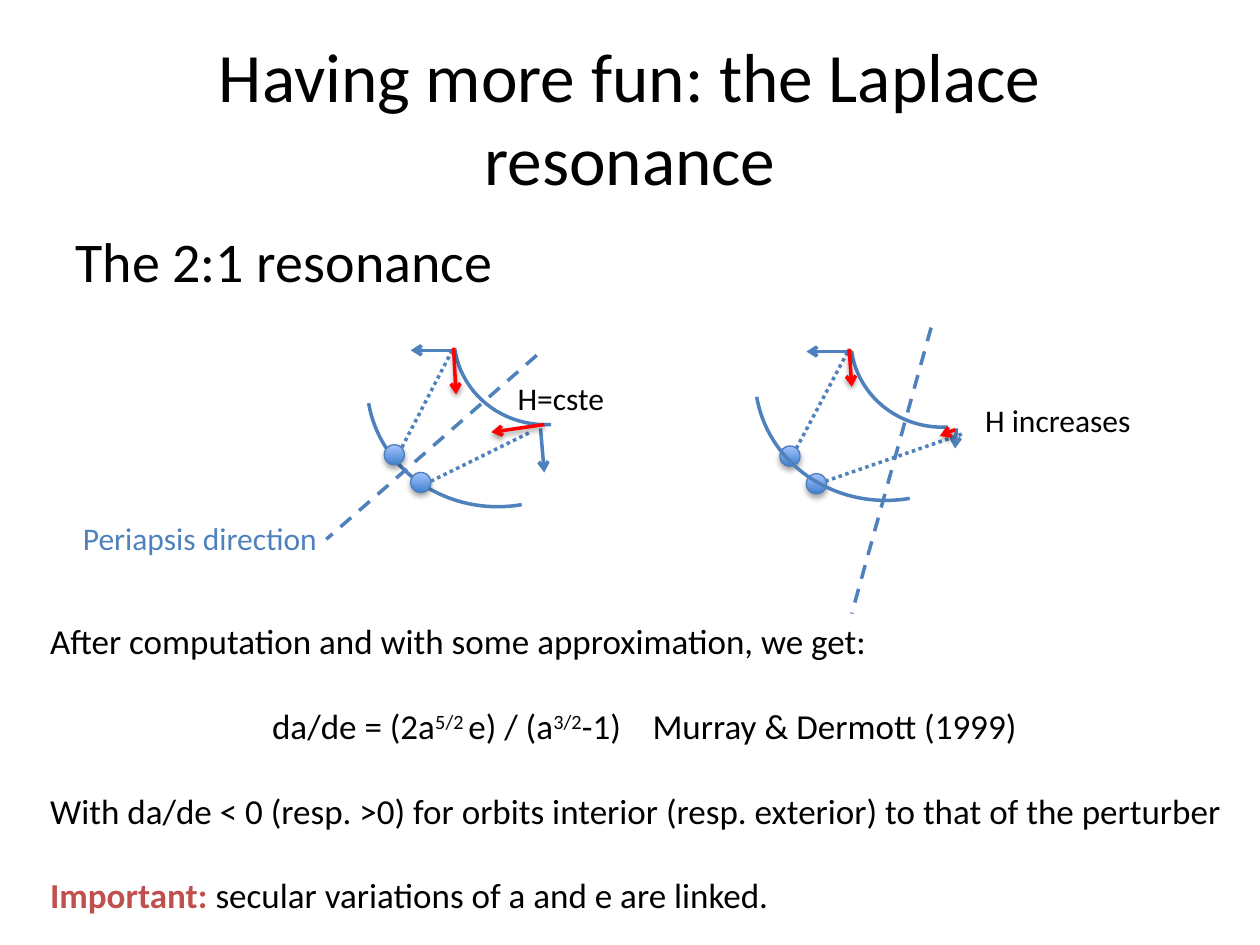
from dataclasses import dataclass

from lxml.etree import SubElement
from pptx import Presentation
from pptx.dml.color import RGBColor
from pptx.enum.dml import MSO_LINE
from pptx.enum.shapes import MSO_CONNECTOR, MSO_SHAPE
from pptx.enum.text import MSO_ANCHOR, MSO_AUTO_SIZE, PP_ALIGN
from pptx.oxml.ns import qn
from pptx.util import Inches, Pt


@dataclass(frozen=True)
class Theme:
    font: str = "Calibri"
    text: str = "000000"
    blue: str = "4F81BD"
    force: str = "FF0000"
    accent: str = "C0504D"
    planet_edge: str = "4B7EBC"
    planet_fill: tuple = ("3F80CE", "A4C4FF")
    title: float = 39.6
    heading: float = 32
    body: float = 20
    label: float = 18
    stroke: float = 2
    thin: float = 0.75


THEME = Theme()
PLANET_SIZE = 0.16

# Distances in inches from the corner of a diagram.
PLANETS = [(0, 0.77), (0.21, 0.99)]
OUTER_ARC = dict(size=(1.48, 1.42), rotation=171.8, start=165.29)
INNER_ARC = dict(size=(2.12, 2), rotation=170.2, start=162)
CONSTANT_H = dict(
    outer=(0.55, -0.81), inner=(-0.14, -0.74), arcs_on_top=False,
    periapsis=(1.21, 0.06, -0.46, 1.52),
    sight_lines=[(0.14, 0.79, 0.55, 0), (0.37, 1.06, 1.16, 0.67)],
    velocities=[(0.57, 0.02, 0.21, 0.02), (1.24, 0.64, 1.27, 0.99)],
    forces=[(0.55, 0, 0.57, 0.37), (1.27, 0.61, 0.85, 0.67)],
)
GROWING_H = dict(
    outer=(0.56, -0.8), inner=(-0.2, -0.8), arcs_on_top=True,
    periapsis=(1.2, -0.17, 0.57, 2.1),
    sight_lines=[(0.13, 0.79, 0.55, 0), (0.36, 1.05, 1.46, 0.67)],
    velocities=[(0.57, 0.02, 0.21, 0.02), (1.4, 0.63, 1.39, 0.79)],
    forces=[(0.55, 0, 0.57, 0.3), (1.39, 0.64, 1.27, 0.69)],
)

# Each paragraph is a list of runs: wording and format.
RAISED = dict(baseline="30000")
EXPLANATION = [
    [("After computation and with some approximation, we get:", {})],
    [("da/de = (2a", {}), ("5/2 ", RAISED), ("e) / (a", {}), ("3/2", RAISED),
     ("-1)", {}), (" ", dict(spc="1350")), ("Murray & Dermott (1999)", {})],
    [("With da/de < 0 (resp. >0) for orbits interior (resp. exterior) "
      "to that of the perturber", {})],
    [("Important: ", dict(color=THEME.accent, bold=True)),
     ("secular variations of a and e are linked.", {})],
]


def rgb(value):
    return RGBColor.from_string(value)


def add_run(paragraph, wording, size, color=THEME.text, bold=False, **character):
    run = paragraph.add_run()
    run.text = wording
    for name, value in dict(name=THEME.font, size=Pt(size), bold=bold).items():
        setattr(run.font, name, value)
    run.font.color.rgb = rgb(color)
    for name, value in character.items():
        run.font._element.set(name, value) if hasattr(run.font, "_element") \
            else run._r.get_or_add_rPr().set(name, value)


def add_text_frame(slide, box, **frame_format):
    frame = slide.shapes.add_textbox(*map(Inches, box)).text_frame
    for name, value in dict(dict(word_wrap=True), **frame_format).items():
        setattr(frame, name, value)
    return frame


def add_title(slide, box):
    paragraph = add_text_frame(slide, box, vertical_anchor=MSO_ANCHOR.MIDDLE).paragraphs[0]
    paragraph.alignment = PP_ALIGN.CENTER
    add_run(paragraph, "Having more fun: the Laplace resonance", THEME.title)


def add_heading(slide, box):
    paragraph = add_text_frame(slide, box).paragraphs[0]
    paragraph.space_before = Pt(0.2 * THEME.heading)
    add_run(paragraph, "The 2:1 resonance", THEME.heading)


def add_label(slide, box, wording, color=THEME.text):
    frame = add_text_frame(slide, box, word_wrap=False,
                           auto_size=MSO_AUTO_SIZE.SHAPE_TO_FIT_TEXT)
    add_run(frame.paragraphs[0], wording, THEME.label, color)


def add_explanation(slide, box):
    frame = add_text_frame(slide, box, auto_size=MSO_AUTO_SIZE.SHAPE_TO_FIT_TEXT)
    for index, runs in enumerate(EXPLANATION):
        paragraph = frame.add_paragraph() if index else frame.paragraphs[0]
        paragraph.space_before = Pt(24.4 if index else 0)
        paragraph.alignment = PP_ALIGN.CENTER if index == 1 else PP_ALIGN.LEFT
        for wording, run_format in runs:
            add_run(paragraph, wording, THEME.body, **run_format)


def set_shadow(part, alpha=None, distance=0):
    """Replace the style's shadow by a soft one below, or by none."""
    effects = SubElement(part.element.spPr, qn("a:effectLst"))
    if alpha:
        shadow = SubElement(effects, qn("a:outerShdw"), blurRad=str(Pt(3.1)),
                            dist=str(Pt(distance)), dir="5400000", rotWithShape="0")
        black = SubElement(shadow, qn("a:srgbClr"), val="000000")
        SubElement(black, qn("a:alpha"), val=str(alpha * 1000))


def set_line(part, color, width=THEME.stroke, dash=None):
    part.line.color.rgb = rgb(color)
    part.line.width = Pt(width)
    if dash:
        part.line.dash_style = dash


def add_line(slide, origin, ends, color=THEME.blue, dash=None, arrow=False, shadow=()):
    left, top = origin
    x1, y1, x2, y2 = ends
    line = slide.shapes.add_connector(
        MSO_CONNECTOR.STRAIGHT,
        *map(Inches, (left + x1, top + y1, left + x2, top + y2)))
    set_line(line, color, dash=dash)
    if arrow:
        SubElement(line.element.spPr.find(qn("a:ln")), qn("a:tailEnd"), type="arrow")
    set_shadow(line, *shadow)


def add_arc(slide, origin, offset, size, rotation, start):
    corner = [a + b for a, b in zip(origin, offset)]
    arc = slide.shapes.add_shape(MSO_SHAPE.ARC, *map(Inches, (*corner, *size)))
    arc.rotation = rotation
    arc.adjustments[0] = start
    arc.fill.background()
    set_line(arc, THEME.blue)
    set_shadow(arc)


def add_planet(slide, origin, offset):
    corner = [a + b for a, b in zip(origin, offset)]
    planet = slide.shapes.add_shape(
        MSO_SHAPE.OVAL, *map(Inches, (*corner, PLANET_SIZE, PLANET_SIZE)))
    planet.fill.gradient()
    planet.fill.gradient_angle = 90
    for position, (stop, color) in enumerate(
            zip(planet.fill.gradient_stops, THEME.planet_fill)):
        stop.position = position
        stop.color.rgb = rgb(color)
    set_line(planet, THEME.planet_edge, THEME.thin)
    set_shadow(planet, 35, 1.8)


def add_diagram(slide, origin, geometry):
    def add_orbits():
        add_arc(slide, origin, geometry["outer"], **OUTER_ARC)
        add_arc(slide, origin, geometry["inner"], **INNER_ARC)

    if not geometry["arcs_on_top"]:
        add_orbits()
    for offset in PLANETS:
        add_planet(slide, origin, offset)
    add_line(slide, origin, geometry["periapsis"], dash=MSO_LINE.DASH)
    for ends in geometry["sight_lines"]:
        add_line(slide, origin, ends, dash=MSO_LINE.ROUND_DOT)
    for ends in geometry["velocities"]:
        add_line(slide, origin, ends, arrow=True)
    if geometry["arcs_on_top"]:
        add_orbits()
    for ends in geometry["forces"]:
        add_line(slide, origin, ends, THEME.force, arrow=True, shadow=(38, 1.6))


def main():
    deck = Presentation()
    deck.slide_width, deck.slide_height = Inches(10), Inches(7.5)
    slide = deck.slides.add_slide(deck.slide_layouts[6])
    add_title(slide, (0.5, 0.3, 9, 1.25))
    add_heading(slide, (0.5, 1.75, 9, 0.72))
    add_explanation(slide, (0.3, 4.87, 9.63, 2.46))
    add_diagram(slide, (3.05, 2.76), CONSTANT_H)
    add_diagram(slide, (6.19, 2.77), GROWING_H)
    add_label(slide, (4.01, 2.96, 0.9, 0.4), "H=cste")
    add_label(slide, (7.72, 3.13, 1.37, 0.4), "H increases")
    add_label(slide, (0.56, 4.07, 2.09, 0.4), "Periapsis direction", THEME.blue)
    deck.save("out.pptx")


if __name__ == "__main__":
    main()
